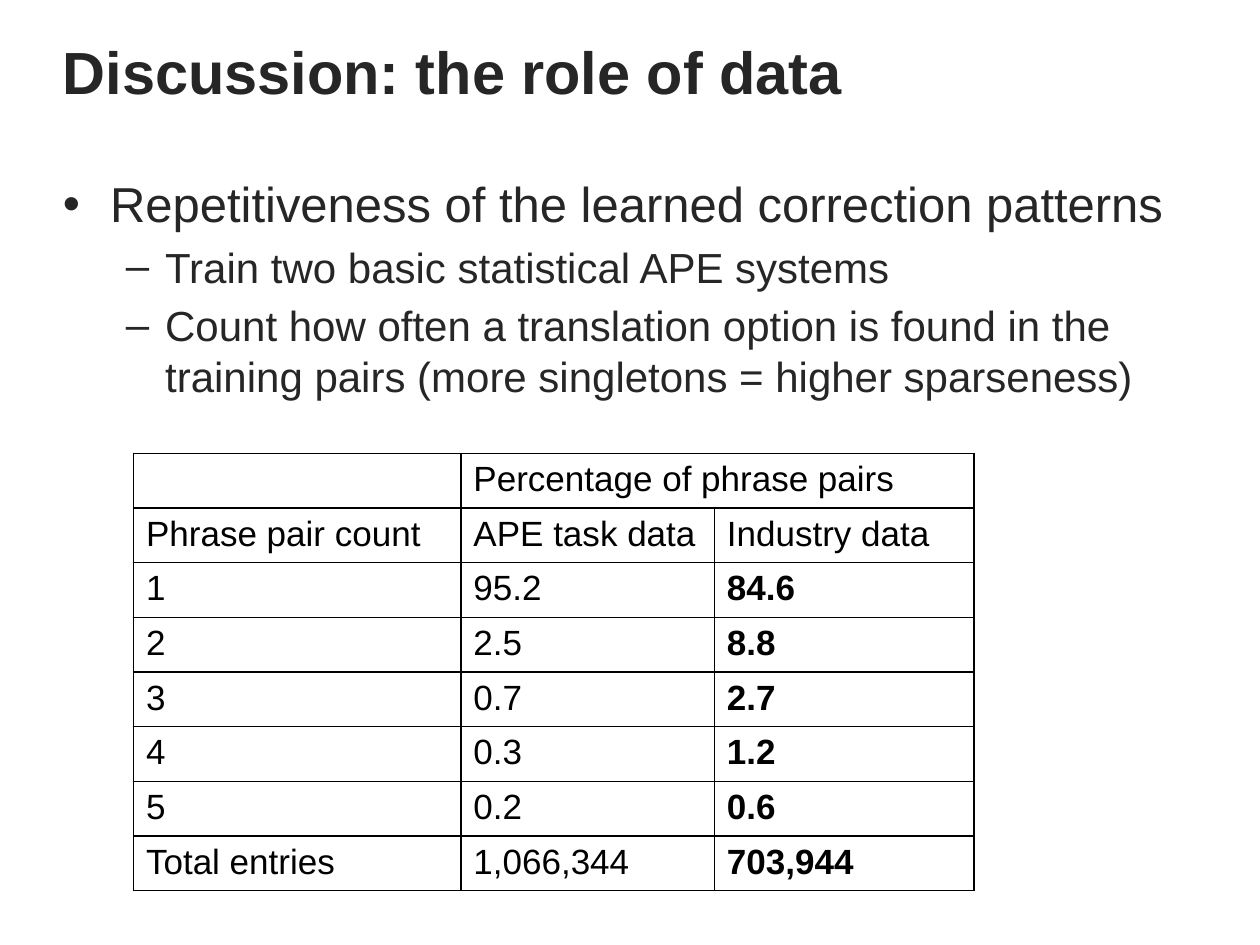
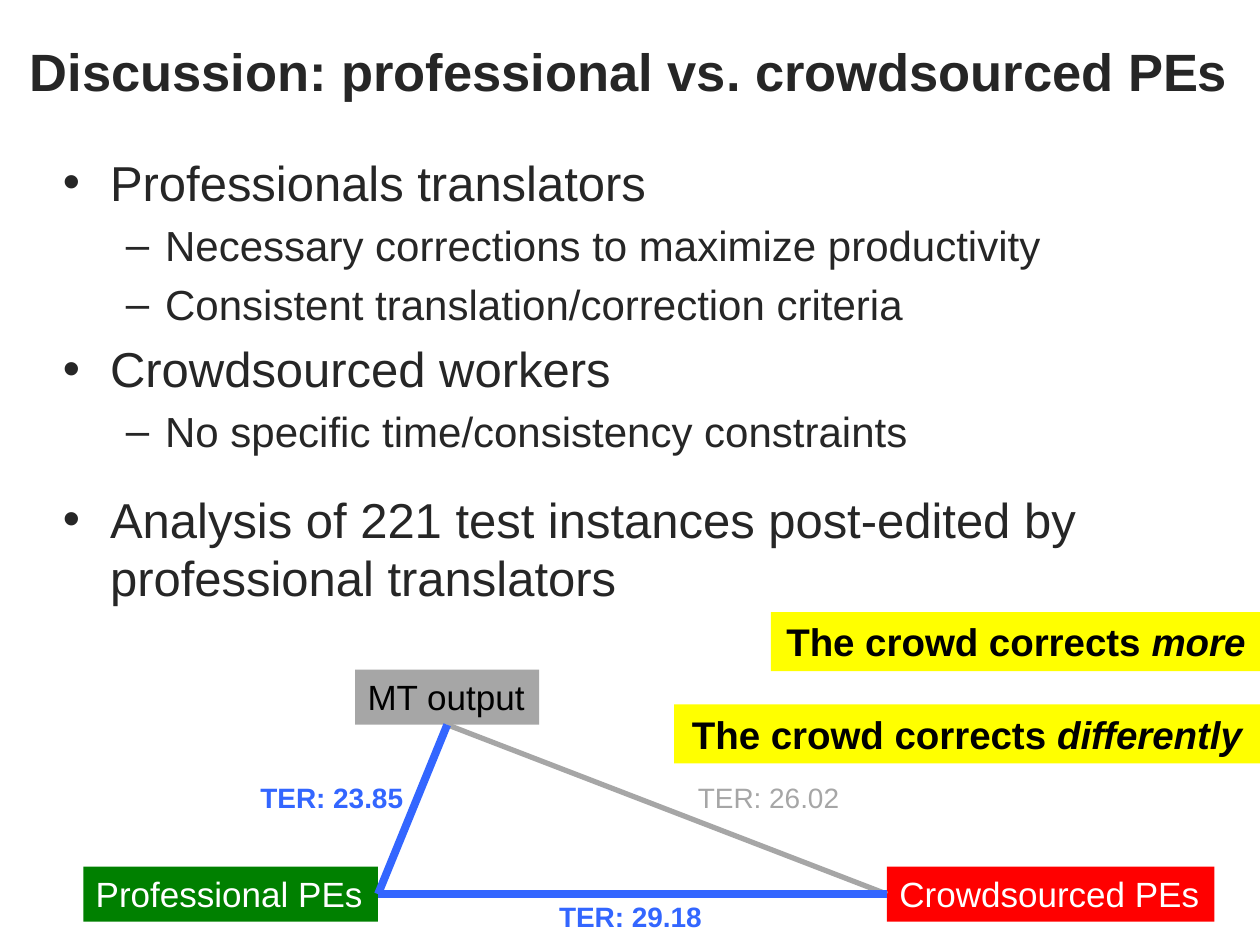
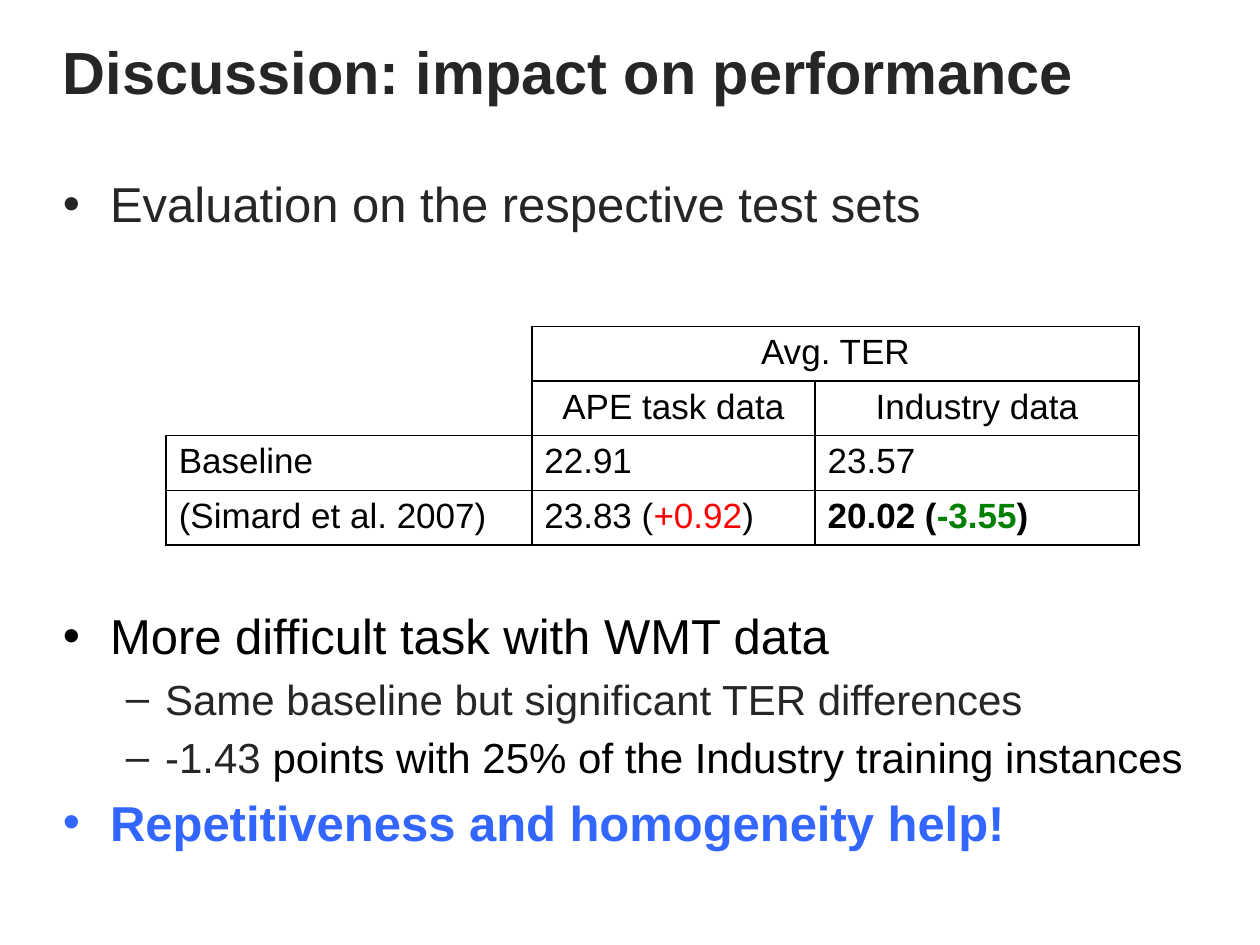
import pptx
import pptx.dml.color
import pptx.enum.shapes
import pptx.enum.text
import pptx.oxml
import pptx.oxml.ns
import pptx.util

Cm = pptx.util.Cm
Pt = pptx.util.Pt
ANCHOR = pptx.enum.text.MSO_ANCHOR
CENTER = pptx.enum.text.PP_ALIGN.CENTER
NAMESPACE = pptx.oxml.ns.nsdecls("a")

COLORS = {
    "text": "262626", "black": "000000", "white": "FFFFFF", "gray": "A6A6A6",
    "green": "008000", "red": "FF0000", "blue": "3366FF", "yellow": "FFFF00",
}
# Per outline level: size, bullet, left margin and hanging indent in cm
LEVELS = [(28, "•", 0.95, -0.95), (24, "–", 2.06, -0.79)]
ROW_HEIGHT = 1.04
BOX_HEIGHT = 1.11
BOLD = {"bold": True}


def rgb(name):
    return pptx.dml.color.RGBColor.from_string(COLORS[name])


def element(xml):
    return pptx.oxml.parse_xml(xml)


class Slides:
    font = "Arial"

    def __init__(self):
        self.deck = pptx.Presentation()
        self.deck.slide_width, self.deck.slide_height = Cm(25.4), Cm(19.05)
        self.page = None

    def new_page(self, title, left=1.27, width=23.5, size=34, align=None):
        self.page = self.deck.slides.add_slide(self.deck.slide_layouts[6])
        frame = self.text_frame(left, 0.58, width, 1.7)
        frame.vertical_anchor = ANCHOR.MIDDLE
        frame.paragraphs[0].alignment = align
        self.add_spans(frame.paragraphs[0], title, size=size, color="text", bold=True)

    def text_frame(self, left, top, width, height):
        """Add a wrapping text box without side margins."""
        box = self.page.shapes.add_textbox(Cm(left), Cm(top), Cm(width), Cm(height))
        frame = box.text_frame
        frame.word_wrap = True
        frame.margin_left = frame.margin_right = 0
        return frame

    def add_spans(self, para, content, **base):
        """Add a string, or a list of (text, format) pairs, over a base format."""
        spans = [(content, {})] if isinstance(content, str) else content
        for text, changes in spans:
            span = para.add_run()
            span.text = text
            values = {"name": self.font, **base, **changes}
            span.font.color.rgb = rgb(values.pop("color"))
            values["size"] = Pt(values["size"])
            for key, value in values.items():
                setattr(span.font, key, value)

    def outline(self, top, height, items, width=24.13):
        """Add a bulleted list of (level, content) or (level, content, gap) items."""
        frame = self.text_frame(1.27, top, width, height)
        for number, (level, content, *gap) in enumerate(items):
            para = frame.add_paragraph() if number else frame.paragraphs[0]
            size, bullet, margin, indent = LEVELS[level]
            para.level = level
            para.space_before = Pt(gap[0] if gap else size * 0.2)
            properties = para._p.get_or_add_pPr()
            properties.set("marL", str(Cm(margin)))
            properties.set("indent", str(Cm(indent)))
            properties.append(element(f'<a:buFont {NAMESPACE} typeface="Arial"/>'))
            properties.append(element(f'<a:buChar {NAMESPACE} char="{bullet}"/>'))
            self.add_spans(para, content, size=size, color="text")

    def block(self, left, top, width, height, fill, content, align=None, **style):
        shape = self.page.shapes.add_shape(
            pptx.enum.shapes.MSO_SHAPE.RECTANGLE, Cm(left), Cm(top), Cm(width), Cm(height))
        shape.shadow.inherit = False
        shape.fill.solid()
        shape.fill.fore_color.rgb = rgb(fill)
        shape.line.fill.background()
        frame = shape.text_frame
        frame.word_wrap = False
        frame.vertical_anchor = ANCHOR.TOP
        frame.paragraphs[0].alignment = align or pptx.enum.text.PP_ALIGN.LEFT
        self.add_spans(frame.paragraphs[0], content, **style)
        return shape

    def label(self, left, top, text, **style):
        box = self.page.shapes.add_textbox(Cm(left), Cm(top), Cm(3.4), Cm(0.94))
        box.text_frame.word_wrap = False
        self.add_spans(box.text_frame.paragraphs[0], text, size=16, **style)

    def link(self, start, start_side, end, end_side, color, width):
        line = self.page.shapes.add_connector(
            pptx.enum.shapes.MSO_CONNECTOR.STRAIGHT, 0, 0, 0, 0)
        line.begin_connect(start, start_side)
        line.end_connect(end, end_side)
        line.line.color.rgb = rgb(color)
        line.line.width = Pt(width)
        line._element.spPr.append(element(f"<a:effectLst {NAMESPACE}/>"))

    def table(self, left, top, widths, rows, merges, centered=0, open_cells=()):
        """Add a ruled table; the first `centered` rows are centred."""
        grid = self.page.shapes.add_table(
            len(rows), len(widths), Cm(left), Cm(top),
            Cm(sum(widths)), Cm(ROW_HEIGHT * len(rows))).table
        grid.first_row = grid.horz_banding = False
        for column, width in zip(grid.columns, widths):
            column.width = Cm(width)
        for number, values in enumerate(rows):
            grid.rows[number].height = Cm(ROW_HEIGHT)
            for place, content in enumerate(values):
                cell = grid.cell(number, place)
                cell.fill.background()
                if (number, place) not in open_cells:
                    self.rule(cell)
                if content:
                    para = cell.text_frame.paragraphs[0]
                    if number < centered:
                        para.alignment = CENTER
                    self.add_spans(para, content, size=20, color="black")
        for first, last in merges:
            grid.cell(*first).merge(grid.cell(*last))

    def rule(self, cell):
        """Draw a thin black line on all four sides of a cell."""
        properties = cell._tc.get_or_add_tcPr()
        for place, side in enumerate("LRTB"):
            properties.insert(place, element(
                f'<a:ln{side} {NAMESPACE} w="{Pt(1)}"><a:solidFill>'
                f'<a:srgbClr val="{COLORS["black"]}"/></a:solidFill></a:ln{side}>'))


def data_page(slides):
    slides.new_page("Discussion: the role of data")
    slides.outline(3.38, 14.58, [
        (0, "Repetitiveness of the learned correction patterns"),
        (1, "Train two basic statistical APE systems"),
        (1, "Count how often a translation option is found in the training pairs "
            "(more singletons = higher sparseness)"),
    ], width=23.47)
    shares = [
        ("1", "95.2", "84.6"), ("2", "2.5", "8.8"), ("3", "0.7", "2.7"),
        ("4", "0.3", "1.2"), ("5", "0.2", "0.6"),
        ("Total entries", "1,066,344", "703,944"),
    ]
    rows = [("", "Percentage of phrase pairs", ""),
            ("Phrase pair count", "APE task data", "Industry data")]
    rows += [(count, task, [(industry, BOLD)]) for count, task, industry in shares]
    slides.table(2.69, 9.14, [6.6, 5.11, 5.23], rows, [((0, 1), (0, 2))])


def editors_page(slides):
    slides.new_page("Discussion: professional vs. crowdsourced PEs",
                    left=0.3, width=24.77, size=30, align=CENTER)
    slides.outline(2.95, 15.67, [
        (0, "Professionals translators"),
        (1, "Necessary corrections to maximize productivity"),
        (1, "Consistent translation/correction criteria"),
        (0, "Crowdsourced workers"),
        (1, "No specific time/consistency constraints"),
        (0, "Analysis of 221 test instances post-edited by professional translators", 18.7),
    ])
    output, professionals, crowd = [
        slides.block(left, top, width, BOX_HEIGHT, fill, text, size=20, color=color)
        for left, top, width, fill, text, color in [
            (7.16, 13.5, 3.71, "gray", "MT output", "black"),
            (1.68, 17.47, 5.94, "green", "Professional PEs", "white"),
            (17.88, 17.47, 6.6, "red", "Crowdsourced PEs", "white"),
        ]]
    slides.link(output, 2, crowd, 1, "gray", 3)
    slides.link(output, 2, professionals, 3, "blue", 4.5)
    slides.link(professionals, 3, crowd, 1, "blue", 4.5)
    slides.label(5, 15.62, "TER: 23.85", color="blue", bold=True)
    slides.label(11.02, 18.01, "TER: 29.18", color="blue", bold=True)
    slides.label(13.82, 15.62, "TER: 26.02", color="gray")
    for left, top, width, manner in [(15.54, 12.34, 9.88, "more"),
                                     (13.59, 14.2, 11.81, "differently")]:
        slides.block(left, top, width, 1.19, "yellow",
                     [("The crowd corrects ", {}), (manner, {"italic": True})],
                     align=CENTER, size=22, color="black", bold=True)


def performance_page(slides):
    slides.new_page("Discussion: impact on performance")
    slides.outline(3.38, 2.24, [(0, "Evaluation on the respective test sets")])
    slides.table(3.35, 6.58, [7.37, 5.71, 6.53], [
        ("", "Avg. TER", ""),
        ("", "APE task data", "Industry data"),
        ("Baseline", "22.91", "23.57"),
        ("(Simard et al. 2007)",
         [("23.83 (", {}), ("+0.92", {"color": "red"}), (")", {})],
         [("20.02 (", BOLD), ("-3.55", {"color": "green", **BOLD}), (")", BOLD)]),
    ], [((0, 0), (1, 0)), ((0, 1), (0, 2))], centered=2, open_cells=[(0, 0), (1, 0)])
    black = {"color": "black"}
    slides.outline(12.09, 6.25, [
        (0, [("More difficult task with WMT data", black)]),
        (1, "Same baseline but significant TER differences"),
        (1, [("-1.43 ", {}),
             ("points with 25% of the Industry training instances", black)]),
        (0, [("Repetitiveness and homogeneity help!", {"color": "blue", **BOLD})]),
    ])


def main():
    slides = Slides()
    data_page(slides)
    editors_page(slides)
    performance_page(slides)
    slides.deck.save("out.pptx")


if __name__ == "__main__":
    main()
